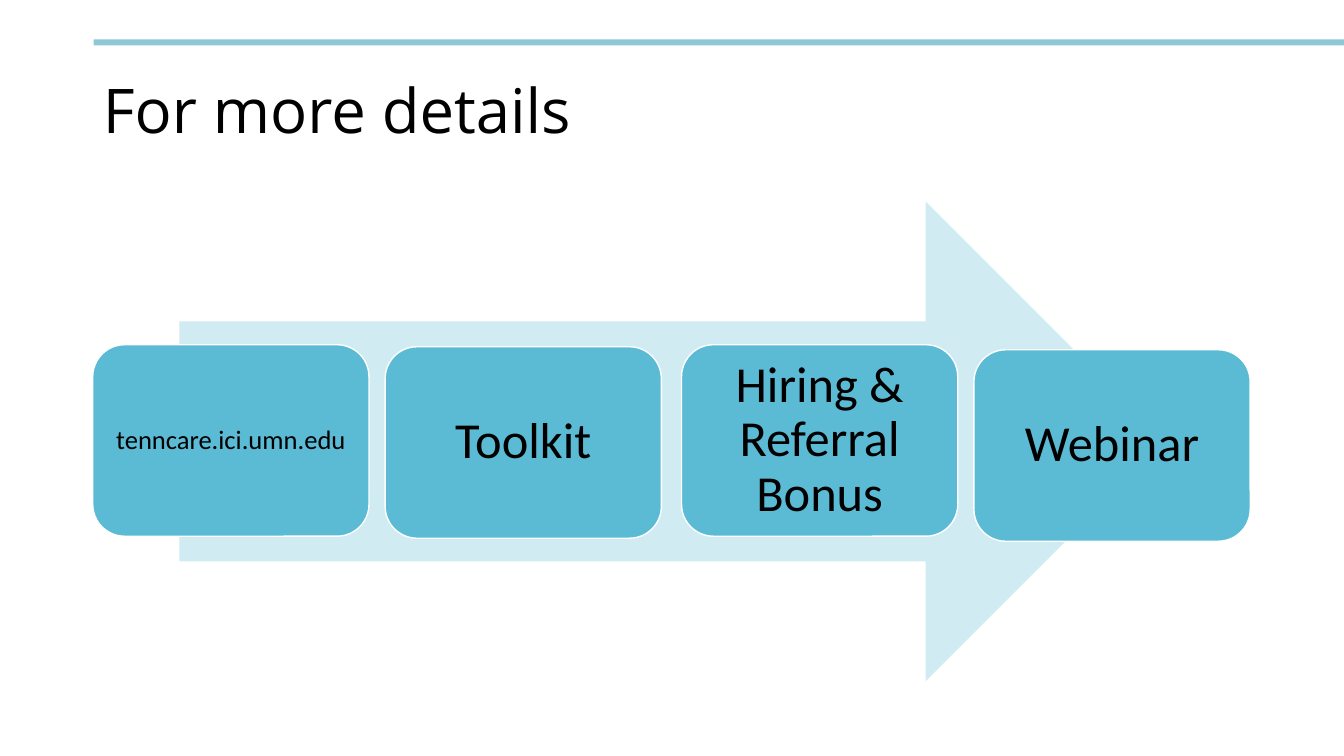
from dataclasses import dataclass
from pptx import Presentation
from pptx.dml.color import RGBColor as Rgb
from pptx.enum.shapes import MSO_SHAPE as Kind
from pptx.enum.text import MSO_ANCHOR as Anchor, PP_ALIGN as Align
from pptx.util import Inches, Pt


@dataclass(frozen=True)
class Theme:
    ink: Rgb = Rgb.from_string("000000")
    edge: Rgb = Rgb.from_string("FFFFFF")
    rule: Rgb = Rgb.from_string("8EC7D7")
    arrow: Rgb = Rgb.from_string("D0EBF2")
    card: Rgb = Rgb.from_string("5BBBD5")
    head: str = "Open Sans"
    body: str = "Calibri"
    title: Pt = Pt(44)
    large: Pt = Pt(36)
    small: Pt = Pt(19)


theme = Theme()


def add_block(kind, left, top, width, height, fill):
    block = slide.shapes.add_shape(
        kind, Inches(left), Inches(top), Inches(width), Inches(height))
    block.shadow.inherit = False
    block.fill.solid()
    block.fill.fore_color.rgb = fill
    block.line.fill.background()
    return block


def style_text(frame, font, size, align):
    frame.word_wrap = True
    frame.vertical_anchor = Anchor.MIDDLE
    line = frame.paragraphs[0]
    line.alignment = align
    line.line_spacing = 0.9
    for run in line.runs:
        run.font.name = font
        run.font.size = size
        run.font.color.rgb = theme.ink


deck = Presentation()
deck.slide_width = Inches(13.33)
deck.slide_height = Inches(7.5)
slide = deck.slides.add_slide(deck.slide_layouts[5])

title = slide.shapes.title
title.left, title.top = Inches(0.92), Inches(0.4)
title.width, title.height = Inches(11.5), Inches(1.45)
title.text_frame.text = "For more details"
style_text(title.text_frame, theme.head, theme.title, Align.LEFT)

add_block(Kind.RECTANGLE, 0.93, 0.39, 12.4, 0.06, theme.rule)
add_block(Kind.RIGHT_ARROW, 1.78, 2, 9.78, 4.76, theme.arrow)

cards = [
    ("tenncare.ici.umn.edu", 0.92, 3.42, theme.small, 0.08),
    ("Toolkit", 3.82, 3.44, theme.large, 0.15),
    ("Hiring & Referral Bonus", 6.76, 3.42, theme.large, 0.15),
    ("Webinar", 9.66, 3.47, theme.large, 0.15),
]
for label, left, top, size, inset in cards:
    card = add_block(Kind.ROUNDED_RECTANGLE, left, top, 2.74, 1.9, theme.card)
    card.line.color.rgb = theme.edge
    card.line.width = Pt(1)
    frame = card.text_frame
    frame.margin_left = frame.margin_right = Inches(inset)
    frame.margin_top = frame.margin_bottom = Inches(inset)
    frame.text = label
    style_text(frame, theme.body, size, Align.CENTER)

deck.save("out.pptx")
